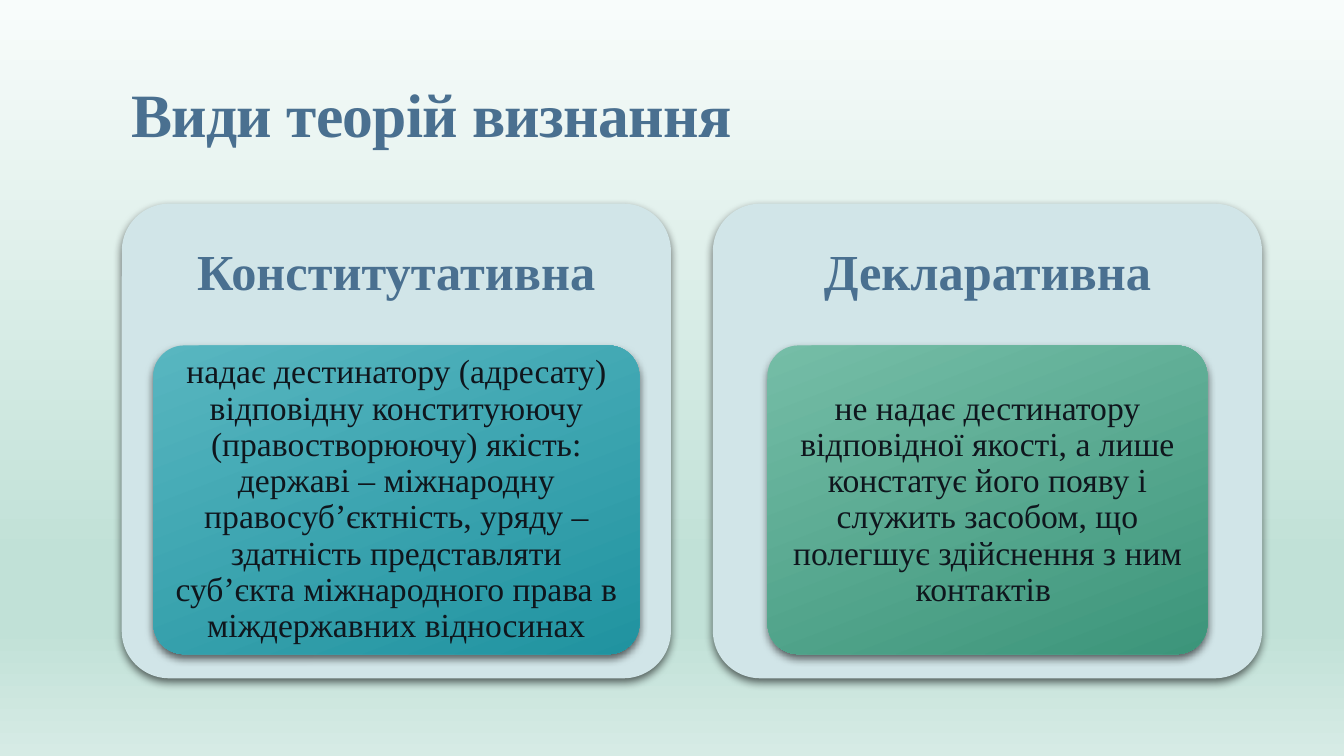
from lxml.etree import SubElement
from pptx import Presentation
from pptx.dml.color import RGBColor
from pptx.enum.shapes import MSO_SHAPE as Shape
from pptx.enum.text import MSO_ANCHOR as Anchor, MSO_AUTO_SIZE as AutoSize, PP_ALIGN as Align
from pptx.oxml.ns import qn
from pptx.util import Pt

PX = 9525  # EMU per px, slide is 1280 x 720 px
FONT = "Times New Roman"
COLORS = {
    "heading": "4A7090",
    "text": "0F161D",
    "panel": "D1E5E8",
    "shadow": "000000",
}
BACKGROUND = [(0, "F8FCFB"), (74, "C1E1D7"), (83, "C1E1D7"), (100, "D6EBE5")]
TEAL = [(0, "58B6C0"), (100, "2093A0")]
GREEN = [(0, "75BDA7"), (100, "3C957A")]

PANEL_TOP, PANEL_WIDTH, PANEL_HEIGHT, HEADING_HEIGHT = 194, 523, 452, 135
THEORIES = [
    # panel left, heading, card width, card gradient, card text
    (116, "Конститутативна", 463, TEAL,
     "надає дестинатору (адресату) відповідну конституюючу (правостворюючу) якість: "
     "державі – міжнародну правосуб’єктність, уряду – здатність представляти "
     "суб’єкта міжнародного права в міждержавних відносинах"),
    (679, "Декларативна", 419, GREEN,
     "не надає дестинатору відповідної якості, а лише констатує його появу і "
     "служить засобом, що полегшує здійснення з ним контактів "),
]


def emu(*lengths):
    return [length * PX for length in lengths]


def set_gradient(fill, owner, stops, clockwise_angle):
    fill.gradient()
    fill.gradient_angle = 360 - clockwise_angle
    stop_list = next(owner.element.iter(qn("a:gsLst")))
    for old_stop in list(stop_list):
        stop_list.remove(old_stop)
    for percent, color in stops:
        stop = SubElement(stop_list, qn("a:gs"), pos=str(percent * 1000))
        SubElement(stop, qn("a:srgbClr"), val=color)


def add_shadow(shape):
    shape.shadow.inherit = False
    effects = next(shape.element.iter(qn("a:effectLst")))
    shadow = SubElement(effects, qn("a:outerShdw"), blurRad=str(Pt(6)), dist=str(Pt(3)),
                        dir="5400000", algn="ctr", rotWithShape="0")
    color = SubElement(shadow, qn("a:srgbClr"), val=COLORS["shadow"])
    SubElement(color, qn("a:alpha"), val="60000")


def write_text(shape, text, size, color, bold=False, align=Align.CENTER,
               anchor=Anchor.MIDDLE, line_spacing=0.9, insets=(10, 5)):
    frame = shape.text_frame
    frame.word_wrap = True
    frame.auto_size = AutoSize.NONE
    frame.vertical_anchor = anchor
    frame.margin_left = frame.margin_right = insets[0] * PX
    frame.margin_top = frame.margin_bottom = insets[1] * PX
    frame.text = text
    paragraph = frame.paragraphs[0]
    paragraph.alignment = align
    paragraph.line_spacing = line_spacing
    font = paragraph.font
    font.name, font.size, font.bold = FONT, Pt(size), bold
    font.color.rgb = RGBColor.from_string(COLORS[color])
    return paragraph


def add_rounded_box(slide, left, top, width, height):
    box = slide.shapes.add_shape(Shape.ROUNDED_RECTANGLE, *emu(left, top, width, height))
    box.adjustments[0] = 0.1
    box.line.fill.background()
    add_shadow(box)
    return box


def place_title(slide, text, left, top, width, height):
    title = slide.shapes.title
    title.left, title.top, title.width, title.height = emu(left, top, width, height)
    paragraph = write_text(title, text, 44, "heading", bold=True, align=Align.LEFT,
                           anchor=Anchor.BOTTOM, line_spacing=0.85)
    # Slightly tightened letters
    paragraph.runs[0].font._element.set("spc", "-50")


def add_theory(slide, left, top, width, height, heading, card_width, gradient, text):
    # Panel
    panel = add_rounded_box(slide, left, top, width, height)
    panel.fill.solid()
    panel.fill.fore_color.rgb = RGBColor.from_string(COLORS["panel"])

    # Heading
    label = slide.shapes.add_textbox(*emu(left, top, width, HEADING_HEIGHT))
    write_text(label, heading, 36, "heading", bold=True, insets=(14, 14))

    # Description card, centred in the panel
    card_left = left + (width - card_width) // 2
    card = add_rounded_box(slide, card_left, top + HEADING_HEIGHT, card_width, 294)
    set_gradient(card.fill, card, gradient, 69)
    write_text(card, text, 24, "text", insets=(7, 5))


def main():
    presentation = Presentation()
    presentation.slide_width, presentation.slide_height = emu(1280, 720)
    slide = presentation.slides.add_slide(presentation.slide_layouts[5])
    set_gradient(slide.background.fill, slide, BACKGROUND, 90)

    place_title(slide, "Види теорій визнання", 115, 49, 1079, 99)
    for left, *content in THEORIES:
        add_theory(slide, left, PANEL_TOP, PANEL_WIDTH, PANEL_HEIGHT, *content)

    presentation.save("out.pptx")


if __name__ == "__main__":
    main()
